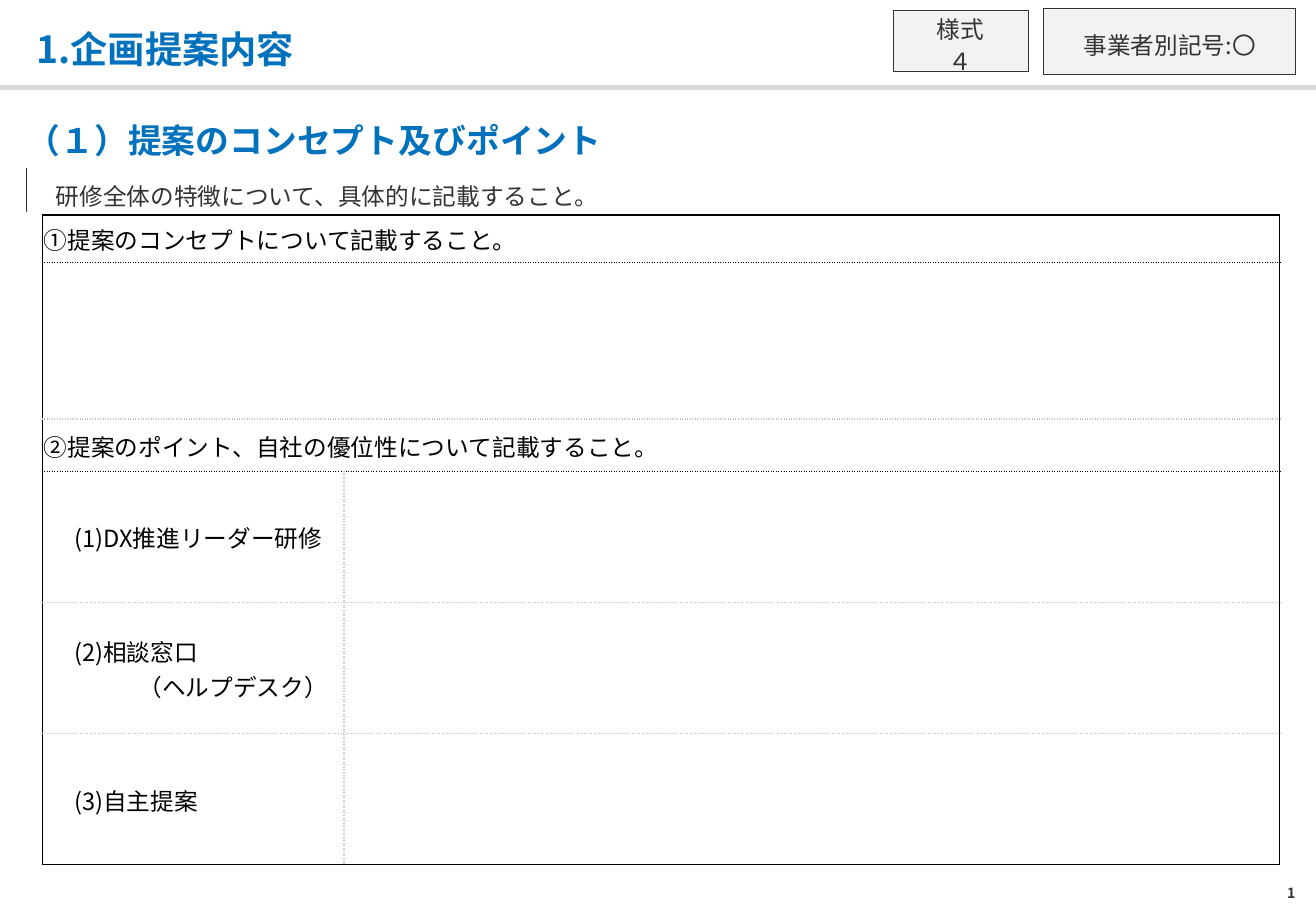
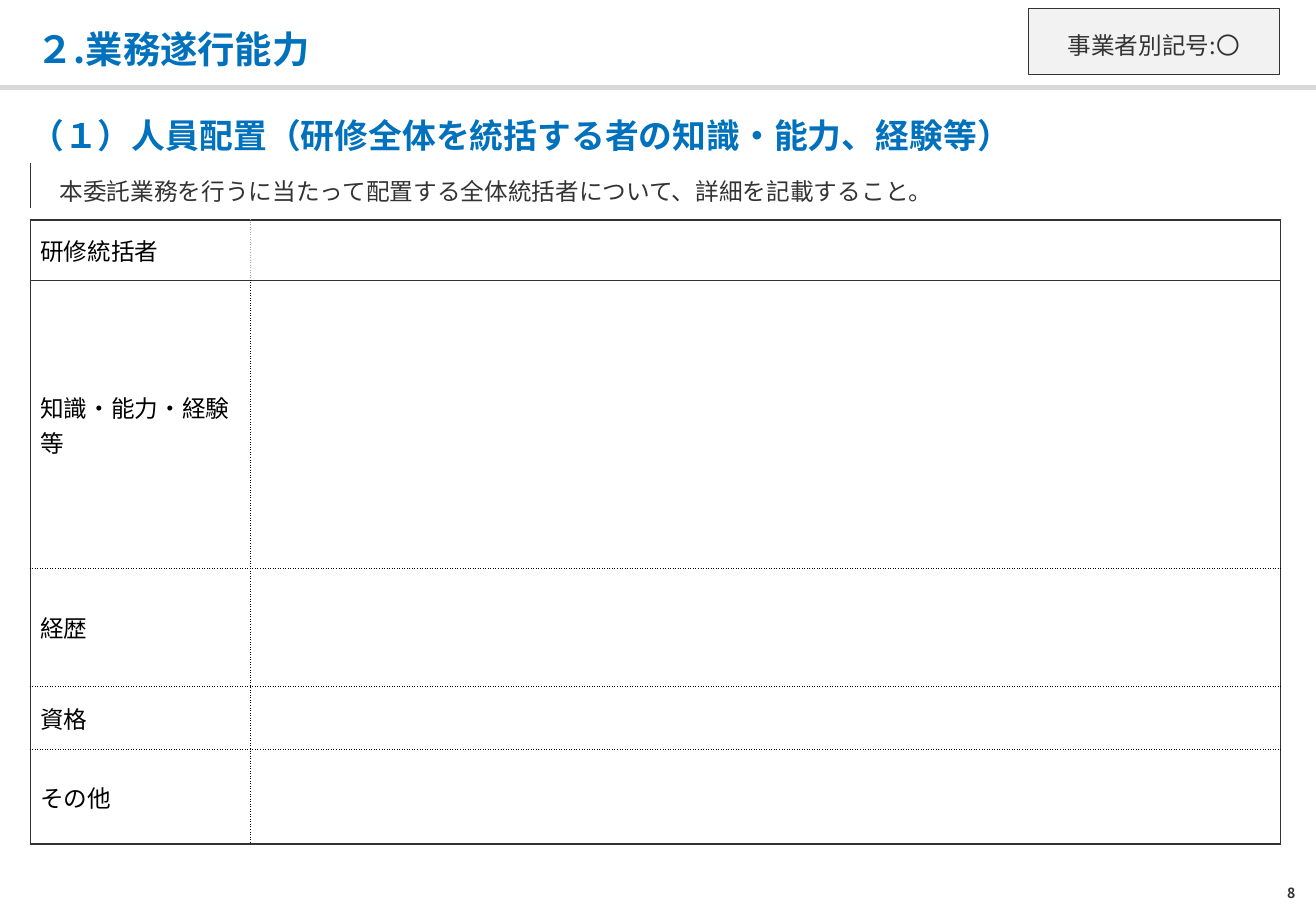
import dataclasses

import lxml.etree
import pptx
import pptx.dml.color
import pptx.enum.shapes
import pptx.enum.text
import pptx.oxml.ns
import pptx.util

Inches = pptx.util.Inches
Pt = pptx.util.Pt
Align = pptx.enum.text.PP_ALIGN
Anchor = pptx.enum.text.MSO_ANCHOR


@dataclasses.dataclass(frozen=True)
class Theme:
    """Colours, font and type sizes shared by the slides."""
    font: str = "Noto Sans CJK JP"
    accent: str = "0071BC"
    ink: str = "333333"
    black: str = "000000"
    band: str = "D9D9D9"
    tag_fill: str = "F2F2F2"
    title: float = 22.1
    heading: float = 20
    body: float = 14
    page: float = 8.3


@dataclasses.dataclass(frozen=True)
class Rule:
    """One kind of table border."""
    color: str
    width: float = 1
    dash: str = "solid"


@dataclasses.dataclass(frozen=True)
class Row:
    """A form row: no divider means that its cells are merged."""
    height: float
    lines: tuple
    top: Rule
    divider: Rule | None = None


THEME = Theme()
SLIDE_SIZE = (10.83, 7.5)
BLACK_RULE = Rule(THEME.black)
INK_RULE = Rule(THEME.ink)
DOTTED = Rule(THEME.black, 0.5, "dot")
PALE_DOTTED = Rule("BFBFBF", 1, "sysDot")
GREY_DOTTED = Rule("A6A6A6", 1, "sysDot")
MARK_RULE = Rule(THEME.ink, 0.5)


def rgb(color):
    """Turn a hex string into a colour."""
    return pptx.dml.color.RGBColor.from_string(color)


def add_run(paragraph, text, size, color, bold=False):
    """Add one run in the theme font, for Latin and East Asian letters."""
    run = paragraph.add_run()
    run.text = text
    run.font.name = THEME.font
    run.font.size = Pt(size)
    run.font.bold = bold
    run.font.color.rgb = rgb(color)
    east_asian = lxml.etree.SubElement(run.font._element, pptx.oxml.ns.qn("a:ea"))
    east_asian.set("typeface", THEME.font)


def set_insets(holder, insets):
    """Set the left, top, right and bottom margins of a cell or text frame."""
    for side, inset in zip(("left", "top", "right", "bottom"), insets):
        setattr(holder, f"margin_{side}", Inches(inset))


def set_frame(frame, insets=(0, 0, 0, 0)):
    """Prepare a wrapping, middle-anchored frame and return its first paragraph."""
    frame.word_wrap = True
    frame.auto_size = pptx.enum.text.MSO_AUTO_SIZE.NONE
    frame.vertical_anchor = Anchor.MIDDLE
    set_insets(frame, insets)
    return frame.paragraphs[0]


def add_text(slide, box, text, size, color, align=Align.LEFT, spacing=1.0):
    """Place one bold line of text in a box."""
    label = slide.shapes.add_textbox(*map(Inches, box))
    paragraph = set_frame(label.text_frame)
    paragraph.alignment = align
    paragraph.line_spacing = spacing
    add_run(paragraph, text, size, color, bold=True)


def add_panel(slide, box, fill, line=None):
    """Place a flat rectangle."""
    panel = slide.shapes.add_shape(
        pptx.enum.shapes.MSO_SHAPE.RECTANGLE, *map(Inches, box))
    panel.shadow.inherit = False
    panel.fill.solid()
    panel.fill.fore_color.rgb = rgb(fill)
    if line:
        panel.line.color.rgb = rgb(line)
        panel.line.width = Pt(0.5)
    else:
        panel.line.fill.background()
    return panel


def add_tag(slide, box, text, side=0.2):
    """Place a framed grey tag in the header."""
    tag = add_panel(slide, box, THEME.tag_fill, THEME.ink)
    paragraph = set_frame(tag.text_frame, (side, 0.16, side, 0.12))
    paragraph.alignment = Align.CENTER
    paragraph.line_spacing = 1.1
    add_run(paragraph, text, THEME.body, THEME.ink)


def set_borders(cell, left=None, right=None, top=None, bottom=None):
    """Clear the fill of a cell and draw its four borders."""
    cell.fill.background()
    qn = pptx.oxml.ns.qn
    properties = cell._tc.get_or_add_tcPr()
    sides = zip(("a:lnL", "a:lnR", "a:lnT", "a:lnB"), (left, right, top, bottom))
    for position, (tag, rule) in enumerate(sides):
        border = lxml.etree.Element(qn(tag))
        properties.insert(position, border)
        if rule is None:
            lxml.etree.SubElement(border, qn("a:noFill"))
            continue
        border.set("w", str(Pt(rule.width)))
        fill = lxml.etree.SubElement(border, qn("a:solidFill"))
        lxml.etree.SubElement(fill, qn("a:srgbClr")).set("val", rule.color)
        lxml.etree.SubElement(border, qn("a:prstDash")).set("val", rule.dash)


def add_grid(slide, left, top, widths, heights):
    """Add an unbanded table with the given column widths and row heights."""
    box = (left, top, sum(widths), sum(heights))
    grid = slide.shapes.add_table(
        len(heights), len(widths), *map(Inches, box)).table
    grid.first_row = False
    grid.horz_banding = False
    for column, width in zip(grid.columns, widths):
        column.width = Inches(width)
    for row, height in zip(grid.rows, heights):
        row.height = Inches(height)
    return grid


def add_section(slide, left, top, width, heading, instruction):
    """Place the section heading above its marked instruction."""
    grid = add_grid(slide, left, top, (width,), (0.48, 0.3))
    heading_cell, instruction_cell = grid.cell(0, 0), grid.cell(1, 0)
    set_insets(heading_cell, (0, 0, 0, 0.03))
    set_borders(heading_cell)
    paragraph = heading_cell.text_frame.paragraphs[0]
    paragraph.line_spacing = 1.1
    add_run(paragraph, heading, THEME.heading, THEME.accent, bold=True)

    set_insets(instruction_cell, (0.24, 0, 0, 0))
    set_borders(instruction_cell, left=MARK_RULE)
    paragraph = instruction_cell.text_frame.paragraphs[0]
    paragraph.alignment = Align.JUSTIFY
    paragraph.line_spacing = 1.3
    add_run(paragraph, instruction, THEME.body, THEME.ink)


def add_label(cell, lines):
    """Write indented lines in a form cell."""
    for index, (indent, text) in enumerate(lines):
        frame = cell.text_frame
        paragraph = frame.add_paragraph() if index else frame.paragraphs[0]
        paragraph._p.get_or_add_pPr().set("marL", str(Inches(indent)))
        add_run(paragraph, text, THEME.body, THEME.black)


def add_form(slide, left, top, widths, rows, outline, insets):
    """Place a form with labels on the left and blank fields on the right."""
    grid = add_grid(slide, left, top, widths, [row.height for row in rows])
    bottoms = [row.top for row in rows[1:]] + [outline]
    for index, (row, bottom) in enumerate(zip(rows, bottoms)):
        label, field = grid.cell(index, 0), grid.cell(index, 1)
        for cell in (label, field):
            set_insets(cell, insets)
            cell.vertical_anchor = Anchor.MIDDLE
        set_borders(label, outline, row.divider or outline, row.top, bottom)
        set_borders(field, row.divider, outline, row.top, bottom)
        if row.divider is None:
            label.merge(field)
        add_label(label, row.lines)


def add_page(deck, title, number):
    """Add a slide with the shared title, band and page number."""
    slide = deck.slides.add_slide(deck.slide_layouts[6])
    add_panel(slide, (0, 0.7, SLIDE_SIZE[0], 0.04), THEME.band)
    add_text(slide, (0.3, 0.17, 10.24, 0.43), title, THEME.title,
             THEME.accent, spacing=1.1)
    add_text(slide, (10.14, 7.21, 0.52, 0.28), number, THEME.page,
             THEME.ink, Align.RIGHT)
    return slide


def add_proposal(deck):
    """Build the proposal concept slide."""
    slide = add_page(deck, "1.企画提案内容", "1")
    rows = (
        Row(0.39, ((0, "①提案のコンセプトについて記載すること。"),), BLACK_RULE),
        Row(1.29, (), DOTTED),
        Row(0.43, ((0, "②提案のポイント、自社の優位性について記載すること。"),),
            PALE_DOTTED),
        Row(1.08, ((0.25, "(1)DX推進リーダー研修"),), DOTTED, PALE_DOTTED),
        Row(1.08, ((0.25, "(2)相談窓口"), (0.78, "（ヘルプデスク）")),
            PALE_DOTTED, PALE_DOTTED),
        Row(1.08, ((0.25, "(3)自主提案"),), PALE_DOTTED, PALE_DOTTED),
    )
    add_form(slide, 0.35, 1.77, (2.48, 7.7), rows, BLACK_RULE,
             (0.01, 0.01, 0.01, 0))
    add_tag(slide, (8.59, 0.07, 2.07, 0.54), "事業者別記号:〇")
    add_section(slide, 0.22, 0.9, 10.35, "（１）提案のコンセプト及びポイント",
                "研修全体の特徴について、具体的に記載すること。")
    add_tag(slide, (7.35, 0.09, 1.11, 0.5), "様式４", side=0.28)


def add_staffing(deck):
    """Build the staffing slide."""
    slide = add_page(deck, "２.業務遂行能力", "8")
    add_tag(slide, (8.46, 0.07, 2.07, 0.54), "事業者別記号:〇")
    add_section(slide, 0.25, 0.86, 10.29,
                "（１）人員配置（研修全体を統括する者の知識・能力、経験等）",
                "本委託業務を行うに当たって配置する全体統括者について、詳細を記載すること。")
    rows = (
        Row(0.5, ((0, "研修統括者"),), INK_RULE, GREY_DOTTED),
        Row(2.37, ((0, "知識・能力・経験等"),), INK_RULE, DOTTED),
        Row(0.97, ((0, "経歴"),), DOTTED, DOTTED),
        Row(0.52, ((0, "資格"),), DOTTED, DOTTED),
        Row(0.78, ((0, "その他"),), DOTTED, DOTTED),
    )
    add_form(slide, 0.25, 1.81, (1.81, 8.48), rows, INK_RULE,
             (0.08, 0.04, 0.08, 0.04))


def main():
    """Build and save the deck."""
    deck = pptx.Presentation()
    deck.slide_width, deck.slide_height = map(Inches, SLIDE_SIZE)
    add_proposal(deck)
    add_staffing(deck)
    deck.save("out.pptx")


if __name__ == "__main__":
    main()
